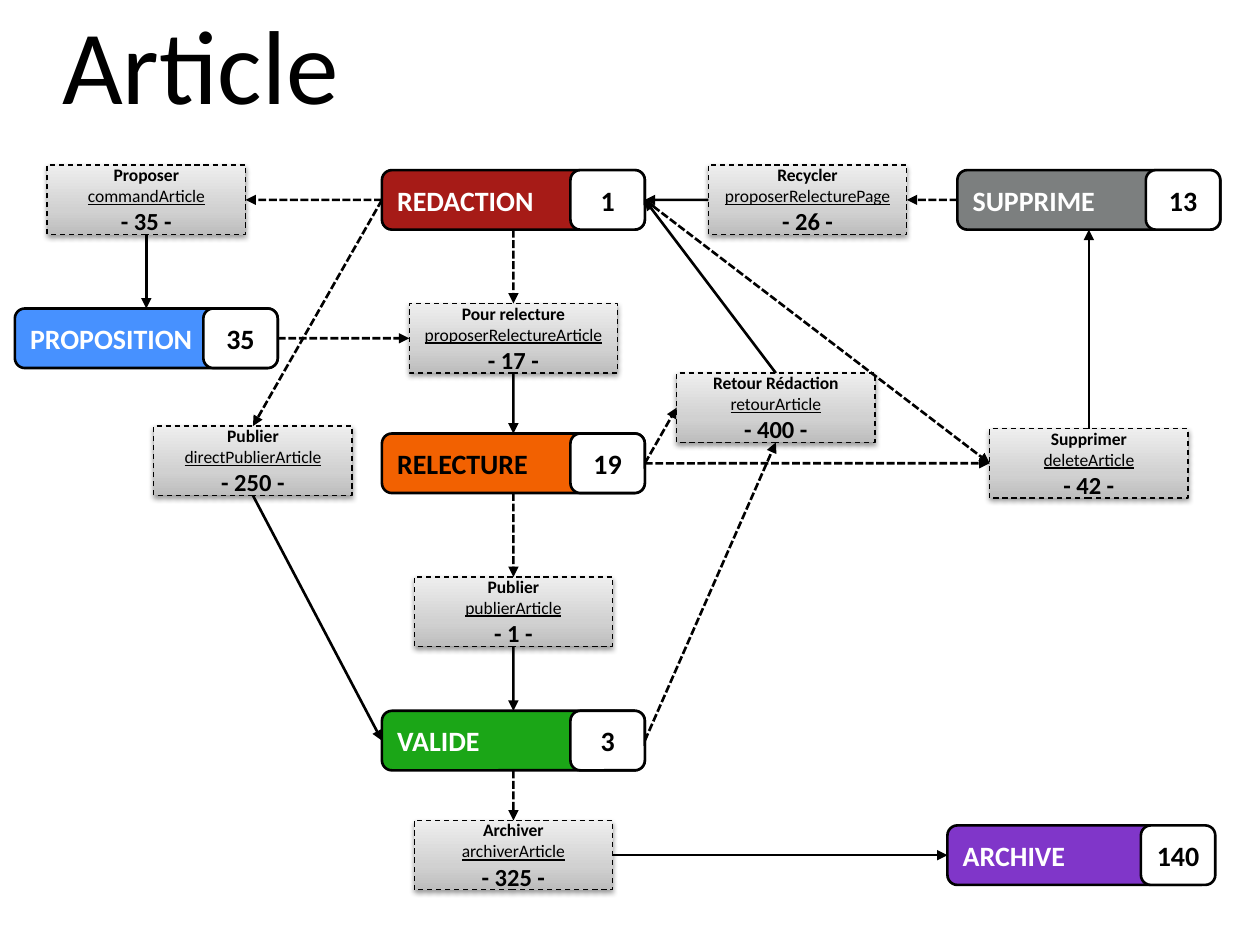
from lxml.etree import SubElement
from pptx import Presentation
from pptx.dml.color import RGBColor
from pptx.enum.dml import MSO_LINE
from pptx.enum.shapes import MSO_CONNECTOR, MSO_SHAPE
from pptx.enum.text import MSO_ANCHOR, PP_ALIGN
from pptx.oxml.ns import qn
from pptx.util import Cm, Pt

TITLE = "Article"
BLACK, WHITE = "000000", "FFFFFF"
STATE_W, STATE_H = 5.3, 1.2
BADGE_W = 1.5
STEP_H = 1.4
TOP, LEFT, BOTTOM, RIGHT = range(4)

# name, count, centre x, centre y, fill, text colour, badge offset
STATES = [
    ("REDACTION", "1", 10.35, 4.03, "A61B17", WHITE, 3.8),
    ("SUPPRIME", "13", 21.95, 4.03, "7C7F7F", WHITE, 3.8),
    ("PROPOSITION", "35", 2.95, 6.82, "4791FF", WHITE, 3.8),
    ("RELECTURE", "19", 10.35, 9.34, "F26101", BLACK, 3.8),
    ("VALIDE", "3", 10.35, 14.93, "1BA617", WHITE, 3.8),
    ("ARCHIVE", "140", 21.75, 17.24, "8036C9", WHITE, 3.9),
]

# label, method, count, centre x, centre y, width
STEPS = [
    ("Proposer", "commandArticle", "- 35 -", 2.95, 4.03, 4),
    ("Pour relecture", "proposerRelectureArticle", "- 17 -", 10.35, 6.82, 4.2),
    ("Recycler", "proposerRelecturePage", "- 26 -", 16.28, 4.03, 4),
    ("Publier", "publierArticle", "- 1 -", 10.35, 12.33, 4),
    ("Supprimer", "deleteArticle", "- 42 -", 21.95, 9.34, 4),
    ("Publier", "directPublierArticle", "- 250 -", 5.1, 9.29, 4),
    ("Archiver", "archiverArticle", "- 325 -", 10.35, 17.24, 4),
    ("Retour Rédaction", "retourArticle", "- 400 -", 15.64, 8.22, 4),
]

# state, side left, step, side entered
ENTRIES = [
    ("REDACTION", LEFT, "commandArticle", RIGHT),
    ("REDACTION", BOTTOM, "proposerRelectureArticle", TOP),
    ("REDACTION", LEFT, "directPublierArticle", TOP),
    ("REDACTION", RIGHT, "deleteArticle", LEFT),
    ("PROPOSITION", RIGHT, "proposerRelectureArticle", LEFT),
    ("SUPPRIME", LEFT, "proposerRelecturePage", RIGHT),
    ("RELECTURE", BOTTOM, "publierArticle", TOP),
    ("RELECTURE", RIGHT, "deleteArticle", LEFT),
    ("RELECTURE", RIGHT, "retourArticle", LEFT),
    ("VALIDE", RIGHT, "retourArticle", BOTTOM),
    ("VALIDE", BOTTOM, "archiverArticle", TOP),
]

# step, side left, state, side entered
EXITS = [
    ("commandArticle", BOTTOM, "PROPOSITION", TOP),
    ("proposerRelecturePage", LEFT, "REDACTION", RIGHT),
    ("proposerRelectureArticle", BOTTOM, "RELECTURE", TOP),
    ("publierArticle", BOTTOM, "VALIDE", TOP),
    ("deleteArticle", TOP, "SUPPRIME", BOTTOM),
    ("directPublierArticle", BOTTOM, "VALIDE", LEFT),
    ("archiverArticle", RIGHT, "ARCHIVE", LEFT),
    ("retourArticle", TOP, "REDACTION", RIGHT),
]

STOPS = [(0, "BDBDBD"), (35, "D1D1D1"), (100, "EEEEEE")]

deck = Presentation()
deck.slide_width, deck.slide_height = Cm(25.4), Cm(19.05)
shapes = deck.slides.add_slide(deck.slide_layouts[6]).shapes


def tint(code):
    return RGBColor.from_string(code)


def write(shape, text, size=16, color=BLACK, bold=False, under=False,
          align=PP_ALIGN.CENTER, more=False):
    frame = shape.text_frame
    frame.word_wrap = True
    frame.vertical_anchor = MSO_ANCHOR.MIDDLE
    para = frame.add_paragraph() if more else frame.paragraphs[0]
    para.alignment = align
    run = para.add_run()
    run.text = text
    font = run.font
    font.name, font.size, font.bold, font.underline = "Calibri", Pt(size), bold, under
    font.color.rgb = tint(color)


def stroke(line, width, dash=None):
    line.color.rgb = tint(BLACK)
    line.width = Pt(width)
    if dash:
        line.dash_style = dash


def box(kind, left, top, width, height):
    shape = shapes.add_shape(kind, Cm(left), Cm(top), Cm(width), Cm(height))
    shape.shadow.inherit = False
    return shape


def pill(left, top, width, fill):
    shape = box(MSO_SHAPE.ROUNDED_RECTANGLE, left, top, width, STATE_H)
    shape.fill.solid()
    shape.fill.fore_color.rgb = tint(fill)
    stroke(shape.line, 1.5)
    return shape


def shade(parent, code):
    return SubElement(parent, qn("a:srgbClr"), val=code)


def blend(shape):
    shape.fill.gradient()
    shape.fill.gradient_angle = 90
    stops = shape.element.spPr.find(".//" + qn("a:gsLst"))
    for old in list(stops):
        stops.remove(old)
    for place, code in STOPS:
        shade(SubElement(stops, qn("a:gs"), pos=str(place * 1000)), code)


def drop(shape):
    glow = SubElement(shape.element.spPr.find(qn("a:effectLst")), qn("a:outerShdw"),
                      blurRad=str(Pt(3.1)), dist=str(Pt(1.6)), dir="5400000", rotWithShape="0")
    SubElement(shade(glow, BLACK), qn("a:alpha"), val="38000")


def join(start, out, end, into, dash=None):
    wire = shapes.add_connector(MSO_CONNECTOR.STRAIGHT, 0, 0, 0, 0)
    wire.begin_connect(nodes[start], out)
    wire.end_connect(nodes[end], into)
    stroke(wire.line, 1.5, dash)
    SubElement(wire.line._get_or_add_ln(), qn("a:tailEnd"), type="triangle")
    SubElement(wire._element.spPr, qn("a:effectLst"))


title = shapes.add_textbox(0, 0, Cm(8.08), Cm(2.51))
write(title, TITLE, size=60)

nodes = {}
for name, count, x, y, fill, color, shift in STATES:
    nodes[name] = pill(x - STATE_W / 2, y - STATE_H / 2, STATE_W, fill)
    write(nodes[name], name, color=color, bold=True, align=PP_ALIGN.LEFT)

for label, method, count, x, y, width in STEPS:
    step = box(MSO_SHAPE.RECTANGLE, x - width / 2, y - STEP_H / 2, width, STEP_H)
    blend(step)
    drop(step)
    stroke(step.line, 0.75, MSO_LINE.DASH)
    write(step, label, size=10, bold=True)
    write(step, method, size=10, under=True, more=True)
    write(step, count, size=14, bold=True, more=True)
    nodes[method] = step

for link in ENTRIES:
    join(*link, dash=MSO_LINE.SQUARE_DOT)
for link in EXITS:
    join(*link)

for name, count, x, y, fill, color, shift in STATES:
    badge = pill(x - STATE_W / 2 + shift, y - STATE_H / 2, BADGE_W, WHITE)
    write(badge, count, bold=True)

deck.save("out.pptx")
